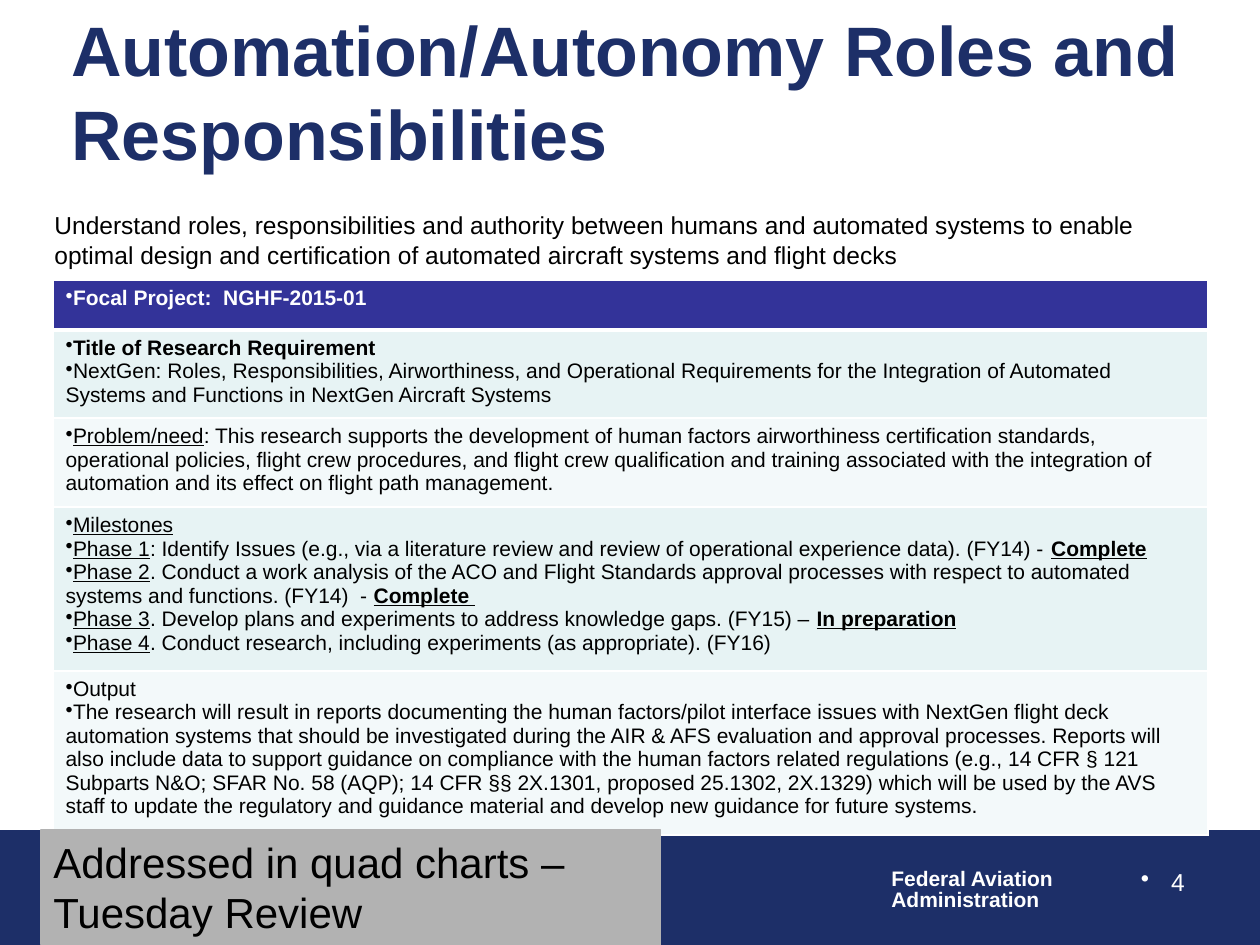
"""Build the slide on automation and autonomy roles and responsibilities."""
from lxml import etree
from pptx import Presentation
from pptx.dml.color import RGBColor
from pptx.enum.shapes import MSO_SHAPE
from pptx.enum.text import MSO_ANCHOR, PP_ALIGN
from pptx.oxml.ns import qn
from pptx.util import Emu, Pt

PX = 914400 // 126
RECTANGLE = MSO_SHAPE.RECTANGLE
TOP, MIDDLE = MSO_ANCHOR.TOP, MSO_ANCHOR.MIDDLE
LEFT, RIGHT = PP_ALIGN.LEFT, PP_ALIGN.RIGHT
FONT = "Arial"
NAVY, INDIGO, GRAY = "1D2F68", "333399", "B2B2B2"
BLACK, WHITE = "000000", "FFFFFF"
DARK_BAND, LIGHT_BAND = "E7F3F4", "F3F9FA"

TITLE = "Automation/Autonomy Roles and Responsibilities"
SUMMARY = ("Understand roles, responsibilities and authority between humans and automated "
           "systems to enable optimal design and certification of automated aircraft systems "
           "and flight decks")
AGENCY = ["Federal Aviation", "Administration"]
NOTE = "Addressed in quad charts – Tuesday Review"
PAGE_NUMBER = "4"

# Each row is a height and paragraphs; each paragraph is a list of (text, style letters).
ROWS = [
    (50, [[("Focal Project:  NGHF-2015-01", "b")]]),
    (88, [
        [("Title of Research Requirement", "b")],
        [("NextGen: Roles, Responsibilities, Airworthiness, and Operational Requirements for "
          "the Integration of Automated Systems and Functions in NextGen Aircraft Systems", "")],
    ]),
    (89, [
        [("Problem/need", "u"),
         (": This research supports the development of human factors airworthiness "
          "certification standards, operational policies, flight crew procedures, and flight "
          "crew qualification and training associated with the integration of automation and "
          "its effect on flight path management.", "")],
    ]),
    (163, [
        [("Milestones", "u")],
        [("Phase 1", "u"),
         (": Identify Issues (e.g., via a literature review and review of operational "
          "experience data). (FY14) - ", ""), ("Complete", "bu")],
        [("Phase 2", "u"),
         (". Conduct a work analysis of the ACO and Flight Standards approval processes with "
          "respect to automated systems and functions. (FY14)  - ", ""), ("Complete ", "bu")],
        [("Phase 3", "u"),
         (". Develop plans and experiments to address knowledge gaps. (FY15) – ", ""),
         ("In preparation", "bu")],
        [("Phase 4", "u"),
         (". Conduct research, including experiments (as appropriate). (FY16)", "")],
    ]),
    (163, [
        [("Output", "")],
        [("The research will result in reports documenting the human factors/pilot interface "
          "issues with NextGen flight deck automation systems that should be investigated "
          "during the AIR & AFS evaluation and approval processes. Reports will also include "
          "data to support guidance on compliance with the human factors related regulations "
          "(e.g., 14 CFR § 121 Subparts N&O; SFAR No. 58 (AQP); 14 CFR §§ 2X.1301, proposed "
          "25.1302, 2X.1329) which will be used by the AVS staff to update the regulatory and "
          "guidance material and develop new guidance for future systems.", "")],
    ]),
]


def px(length):
    """Turn pixels into EMU."""
    return Emu(length * PX)


def rgb(color):
    """Turn a hex string into a colour."""
    return RGBColor.from_string(color)


def write(frame, paragraphs, size, color, align=LEFT, spacing=None, bullet_indent=None):
    """Fill a text frame with paragraphs of (text, style letters) spans."""
    for index, spans in enumerate(paragraphs):
        para = frame.paragraphs[0] if index == 0 else frame.add_paragraph()
        para.alignment = align
        if spacing:
            para.line_spacing = spacing
        if bullet_indent is not None:
            properties = para._p.get_or_add_pPr()
            properties.set("marL", str(px(bullet_indent)))
            properties.set("indent", str(px(-bullet_indent)))
            etree.SubElement(properties, qn("a:buChar"), char="•")
        for text, style in spans:
            span = para.add_run()
            span.text = text
            span.font.name = FONT
            span.font.size = Pt(size)
            span.font.color.rgb = rgb(color)
            span.font.bold = "b" in style
            span.font.underline = "u" in style


def add_text(page, bounds, paragraphs, size, color, anchor=TOP, wrap=True, **text_format):
    """Add a text box at pixel bounds."""
    frame = page.shapes.add_textbox(*map(px, bounds)).text_frame
    frame.word_wrap = wrap
    frame.vertical_anchor = anchor
    write(frame, paragraphs, size, color, **text_format)


def add_panel(page, bounds, color):
    """Add a plain filled rectangle and return it."""
    panel = page.shapes.add_shape(RECTANGLE, *map(px, bounds))
    panel.shadow.inherit = False
    panel.fill.solid()
    panel.fill.fore_color.rgb = rgb(color)
    panel.line.color.rgb = rgb(color)
    panel.line.width = Pt(0.75)
    return panel


def set_borders(cell, widths):
    """Draw white cell borders, ahead of the cell's fill."""
    properties = cell._tc.get_or_add_tcPr()
    for position, (side, width) in enumerate(widths.items()):
        line = etree.Element(qn(f"a:ln{side}"), w=str(Pt(width)))
        fill = etree.SubElement(line, qn("a:solidFill"))
        etree.SubElement(fill, qn("a:srgbClr"), val=WHITE)
        properties.insert(position, line)


def add_project_table(page, left, top, width):
    """Add the one-column table of the focal project."""
    total = sum(height for height, _ in ROWS)
    table = page.shapes.add_table(len(ROWS), 1, px(left), px(top), px(width), px(total)).table
    for index, (height, paragraphs) in enumerate(ROWS):
        header = index == 0
        table.rows[index].height = px(height)
        cell = table.cell(index, 0)
        cell.fill.solid()
        band = DARK_BAND if index % 2 else LIGHT_BAND
        cell.fill.fore_color.rgb = rgb(INDIGO if header else band)
        set_borders(cell, {"L": 1, "R": 1, "T": 3 if index == 1 else 1, "B": 3 if header else 1})
        write(cell.text_frame, paragraphs, 12, WHITE if header else BLACK, bullet_indent=0)


def main():
    """Build and save the deck."""
    deck = Presentation()
    deck.slide_width, deck.slide_height = px(1260), px(945)
    page = deck.slides.add_slide(deck.slide_layouts[6])

    add_panel(page, (0, 831, 1260, 113), NAVY)
    add_text(page, (879, 863, 189, 55), [[(line, "b")] for line in AGENCY], 12, WHITE,
             wrap=False, spacing=0.85)
    add_text(page, (59, 48, 1168, 84), [[(TITLE, "b")]], 40, NAVY, anchor=MIDDLE)
    add_text(page, (42, 204, 1155, 72), [[(SUMMARY, "")]], 14, BLACK)
    add_text(page, (903, 861, 294, 66), [[(PAGE_NUMBER, "")]], 14, WHITE,
             align=RIGHT, bullet_indent=30)
    add_project_table(page, 53, 280, 1155)

    note = add_panel(page, (41, 830, 620, 115), GRAY).text_frame
    note.word_wrap = True
    note.vertical_anchor = TOP
    write(note, [[(NOTE, "")]], 24, BLACK)

    deck.save("out.pptx")


if __name__ == "__main__":
    main()
